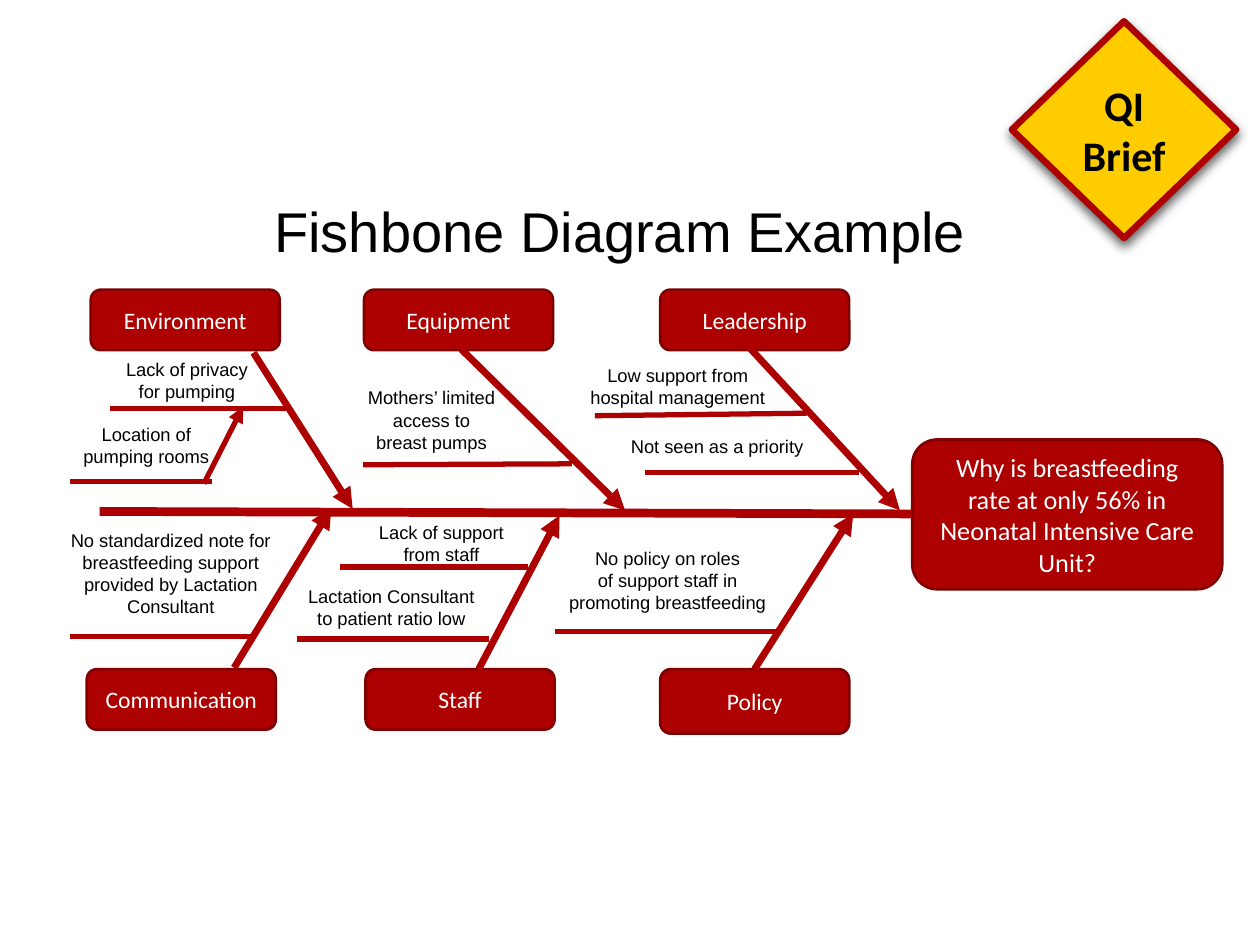
from lxml.etree import SubElement
from pptx import Presentation
from pptx.dml.color import RGBColor
from pptx.enum.shapes import MSO_CONNECTOR, MSO_SHAPE
from pptx.enum.text import MSO_ANCHOR, MSO_AUTO_SIZE, PP_ALIGN
from pptx.oxml.ns import qn
from pptx.util import Cm, Pt

RED, DARK_RED, YELLOW = "AD0101", "800101", "FFCC00"
BLACK, WHITE = "000000", "FFFFFF"
BOX_WIDTH, BOX_HEIGHT = 3.81, 1.22
TOP_ROW, BOTTOM_ROW = 5.84, 13.49


def colour(hex_code):
    return RGBColor.from_string(hex_code)


class Fishbone:
    heading_font = "Calibri"
    body_font = "Arial"

    def __init__(self, slide):
        self.slide = slide

    def style_text(self, frame, text, size, font, text_colour, align, bold=False):
        frame.text = text
        for paragraph in frame.paragraphs:
            paragraph.alignment = align
            for run in paragraph.runs:
                run.font.name = font
                run.font.size = Pt(size)
                run.font.bold = bold
                run.font.color.rgb = colour(text_colour)

    def box(self, text, left, top, width=BOX_WIDTH, height=BOX_HEIGHT, size=13.5,
            kind=MSO_SHAPE.ROUNDED_RECTANGLE, fill=RED, border=DARK_RED,
            border_width=1.5, text_colour=WHITE, bold=False):
        shape = self.slide.shapes.add_shape(
            kind, Cm(left), Cm(top), Cm(width), Cm(height))
        shape.shadow.inherit = False
        shape.fill.solid()
        shape.fill.fore_color.rgb = colour(fill)
        shape.line.color.rgb = colour(border)
        shape.line.width = Pt(border_width)
        shape.text_frame.word_wrap = True
        shape.text_frame.vertical_anchor = MSO_ANCHOR.MIDDLE
        self.style_text(shape.text_frame, text, size, self.heading_font,
                        text_colour, PP_ALIGN.CENTER, bold)
        return shape

    def drop_shadow(self, shape, blur, distance, opacity):
        effects = shape.element.spPr.find(qn("a:effectLst"))
        shadow = SubElement(effects, qn("a:outerShdw"), blurRad=str(Pt(blur)),
                            dist=str(Pt(distance)), dir="5400000", rotWithShape="0")
        tint = SubElement(shadow, qn("a:srgbClr"), val=BLACK)
        SubElement(tint, qn("a:alpha"), val=str(opacity * 1000))

    def line(self, x1, y1, x2, y2, width=3, arrow=False):
        connector = self.slide.shapes.add_connector(
            MSO_CONNECTOR.STRAIGHT, Cm(x1), Cm(y1), Cm(x2), Cm(y2))
        connector.line.color.rgb = colour(RED)
        connector.line.width = Pt(width)
        if arrow:
            SubElement(connector.get_or_add_ln(), qn("a:tailEnd"), type="triangle")
        SubElement(connector.element.spPr, qn("a:effectLst"))

    def label(self, text, left, top, width, height, size=10.5,
              align=PP_ALIGN.CENTER, wrap=True):
        frame = self.slide.shapes.add_textbox(
            Cm(left), Cm(top), Cm(width), Cm(height)).text_frame
        frame.word_wrap = wrap
        frame.auto_size = MSO_AUTO_SIZE.SHAPE_TO_FIT_TEXT
        self.style_text(frame, text, size, self.body_font, BLACK, align)


# Category: name, box position and size, bone from box to spine
CATEGORIES = [
    ("Environment", (1.83, TOP_ROW), (5.11, 7.11, 7.11, 10.26)),
    ("Equipment", (7.34, TOP_ROW), (9.3, 7.04, 12.6, 10.29)),
    ("Leadership", (13.31, TOP_ROW), (15.11, 7.01, 18.14, 10.29)),
    ("Communication", (1.75, BOTTOM_ROW), (4.72, 13.46, 6.68, 10.24)),
    ("Staff", (7.37, BOTTOM_ROW), (9.65, 13.49, 11.28, 10.39)),
    ("Policy", (13.31, BOTTOM_ROW, BOX_WIDTH, 1.3), (15.21, 13.49, 17.2, 10.36)),
]

# Cause: wording, text area, line under it
CAUSES = [
    ("Lack of privacy for pumping", (2.08, 7.09, 3.38, 1.14), (2.21, 8.23, 5.79, 8.23)),
    ("Location of pumping rooms", (1.35, 8.41, 3.2, 1.14), (1.42, 9.7, 4.27, 9.7)),
    ("Mothers’ limited\naccess to\nbreast pumps", (6.35, 7.67, 4.7, 1.6),
     (7.32, 9.37, 11.53, 9.35)),
    ("Low support from hospital management", (11.48, 7.21, 4.37, 1.14),
     (11.99, 8.38, 16.26, 8.33)),
    ("Not seen as a priority", (12.47, 8.64, 4.42, 0.71), (13, 9.53, 17.32, 9.53)),
    ("No standardized note for breastfeeding support provided by Lactation Consultant",
     (1.07, 10.54, 4.75, 2.06), (1.42, 12.83, 5.05, 12.83)),
    ("Lack of support from staff", (7.11, 10.39, 3.58, 1.14), (6.86, 11.43, 10.64, 11.43)),
    ("Lactation Consultant to patient ratio low", (5.77, 11.68, 4.24, 1.14),
     (5.99, 12.88, 9.86, 12.88)),
    ("No policy on roles\nof support staff in\npromoting breastfeeding",
     (11.15, 10.9, 4.62, 1.6), (11.18, 12.73, 15.7, 12.73)),
]


def main():
    deck = Presentation()
    deck.slide_width, deck.slide_height = Cm(25.4), Cm(19.05)
    diagram = Fishbone(deck.slides.add_slide(deck.slide_layouts[6]))

    # Badge and title
    badge = diagram.box("QI Brief", 20.4, 0.43, 4.52, 4.37, size=24,
                        kind=MSO_SHAPE.FLOWCHART_DECISION, fill=YELLOW, border=RED,
                        border_width=3.75, text_colour=BLACK, bold=True)
    diagram.drop_shadow(badge, blur=6, distance=3, opacity=60)
    diagram.label("Fishbone Diagram Example", 5.28, 3.84, 14.55, 1.63, size=32,
                  align=PP_ALIGN.LEFT, wrap=False)

    # Problem at the head, spine leading to it
    diagram.box("Why is breastfeeding rate at only 56% in Neonatal Intensive Care Unit?",
                18.39, 8.86, 6.25, 3.02, size=15)
    diagram.line(2.01, 10.31, 18.39, 10.36, width=5)

    # Categories and their bones
    for name, area, bone in CATEGORIES:
        diagram.box(name, *area)
        diagram.line(*bone, width=4, arrow=True)

    # Causes, and the one that feeds another cause
    for cause, area, underline in CAUSES:
        diagram.line(*underline)
        if cause == "Not seen as a priority":
            diagram.label(cause, *area, align=PP_ALIGN.LEFT)
        else:
            diagram.label(cause, *area)
    diagram.line(4.11, 9.75, 4.9, 8.2, arrow=True)

    deck.save("out.pptx")


if __name__ == "__main__":
    main()
